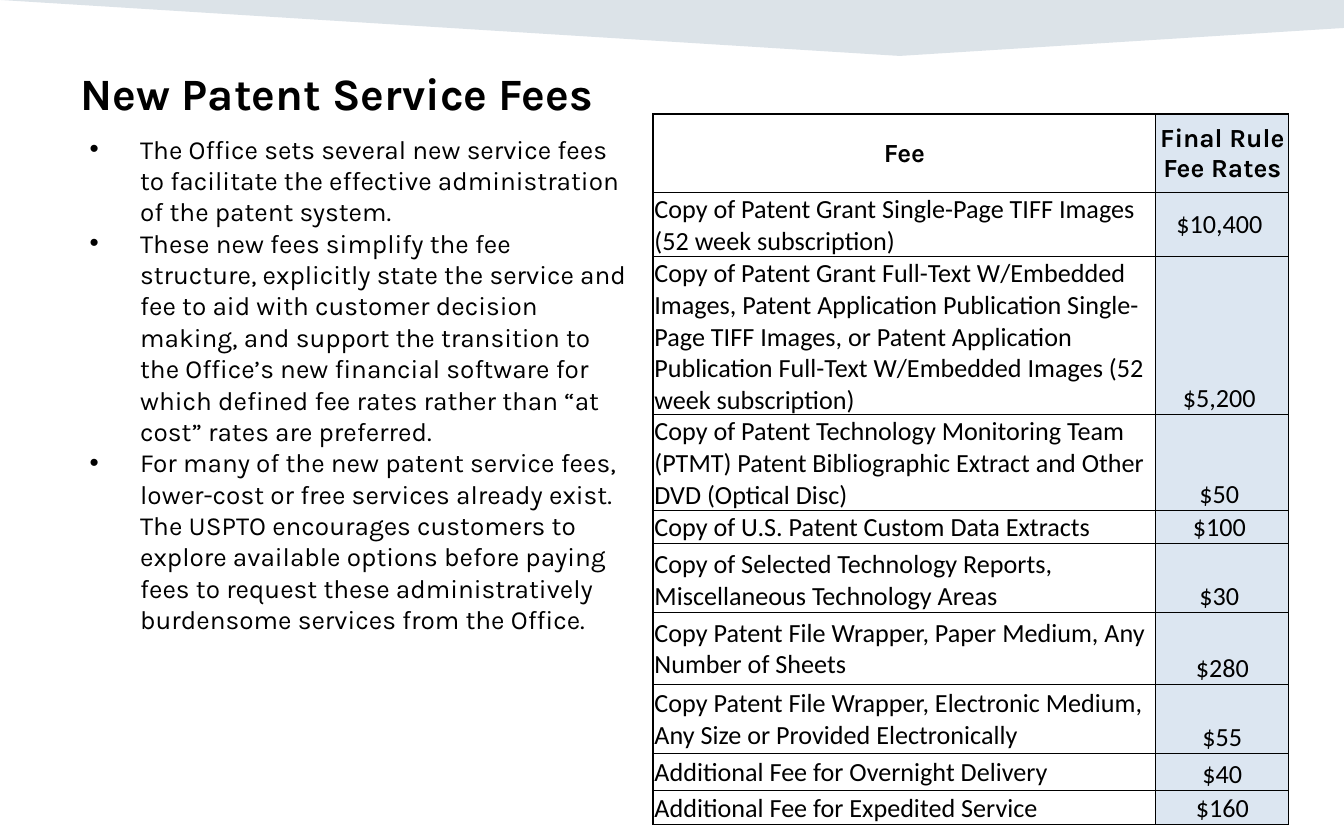
from lxml.etree import SubElement, Element
from pptx import Presentation
from pptx.dml.color import RGBColor
from pptx.enum.text import MSO_ANCHOR as ANCHOR, MSO_AUTO_SIZE as AUTO, PP_ALIGN as ALIGN
from pptx.oxml.ns import qn
from pptx.util import Pt

TITLE = "New Patent Service Fees"
POINTS = [
    "The Office sets several new service fees to facilitate the effective administration of the patent system.",
    "These new fees simplify the fee structure, explicitly state the service and fee to aid with customer "
    "decision making, and support the transition to the Office’s new financial software for which defined "
    "fee rates rather than “at cost” rates are preferred.",
    "For many of the new patent service fees, lower-cost or free services already exist. The USPTO encourages "
    "customers to explore available options before paying fees to request these administratively burdensome "
    "services from the Office.",
]
MID, LOW = ANCHOR.MIDDLE, ANCHOR.BOTTOM
FEES = [
    ("Fee", "Final Rule Fee Rates", 41.8, MID, MID),
    ("Copy of Patent Grant Single-Page TIFF Images (52 week subscription)", "$10,400 ", 26.6, MID, MID),
    ("Copy of Patent Grant Full-Text W/Embedded Images, Patent Application Publication Single-Page TIFF "
     "Images, or Patent Application Publication Full-Text W/Embedded Images (52 week subscription)",
     "$5,200 ", 70.6, MID, LOW),
    ("Copy of Patent Technology Monitoring Team (PTMT) Patent Bibliographic Extract and Other DVD "
     "(Optical Disc)", "$50 ", 43.2, LOW, LOW),
    ("Copy of U.S. Patent Custom Data Extracts", "$100 ", 18, LOW, MID),
    ("Copy of Selected Technology Reports, Miscellaneous Technology Areas", "$30 ", 36.7, LOW, LOW),
    ("Copy Patent File Wrapper, Paper Medium, Any Number of Sheets", "$280", 38.9, MID, LOW),
    ("Copy Patent File Wrapper, Electronic Medium, Any Size or Provided Electronically", "$55", 36.7, MID, LOW),
    ("Additional Fee for Overnight Delivery", "$40", 20.2, MID, LOW),
    ("Additional Fee for Expedited Service", "$160", 18, MID, LOW),
]
COLORS = {"text": "000000", "band": "164469", "label": "FFFFFF", "rate": "DCE6F1"}
BAND = [(0, 0), (720, 0), (720, 15.1), (481.7, 29.5)]
COL_WIDTHS = [269.3, 71.3]
TITLE_BOX = {"left": 36, "top": 29.5, "width": 648, "height": 36.7}
TITLE_FRAME = {"auto_size": AUTO.NONE, "word_wrap": True, "vertical_anchor": LOW, "margin_bottom": Pt(2)}
BODY_BOX = (41, 67.7, 303.1, 278.6)
TABLE_BOX = (349.9, 61.2, sum(COL_WIDTHS), 379.4)
HEADING = {"name": "Karla", "size": Pt(24), "bold": True}
BODY = {"name": "Karla", "size": Pt(14), "bold": False}
HEADER = {**BODY, "bold": True}
CELL = {**BODY, "name": "Calibri"}
CELL_MARGINS = {"margin_left": Pt(0.7), "margin_right": Pt(0.7), "margin_top": Pt(0.7), "margin_bottom": 0}


def set_all(obj, values):
    for name, value in values.items():
        setattr(obj, name, value)


def write(p, text, font, align=ALIGN.LEFT):
    p.alignment = align
    r = p.add_run()
    r.text = text
    set_all(r.font, font)
    r.font.color.rgb = RGBColor.from_string(COLORS["text"])


def add_band(s):
    builder = s.shapes.build_freeform(*BAND[0], scale=Pt(1))
    builder.add_line_segments(BAND[1:], close=True)
    sp = builder.convert_to_shape()
    sp.shadow.inherit = False
    sp.line.fill.background()
    sp.fill.solid()
    sp.fill.fore_color.rgb = RGBColor.from_string(COLORS["band"])
    color = next(sp.element.spPr.iter(qn("a:srgbClr")))
    SubElement(color, qn("a:alpha"), val="15000")
    s.shapes.element.insert(2, sp.element)


def add_title(s):
    sp = s.shapes.title
    set_all(sp, {name: Pt(v) for name, v in TITLE_BOX.items()})
    set_all(sp.text_frame, TITLE_FRAME)
    write(sp.text_frame.paragraphs[0], TITLE, HEADING)


def add_body(s):
    tf = s.shapes.add_textbox(*map(Pt, BODY_BOX)).text_frame
    tf.word_wrap = True
    for i, text in enumerate(POINTS):
        p = tf.add_paragraph() if i else tf.paragraphs[0]
        write(p, text, BODY)
        pPr = p._p.get_or_add_pPr()
        pPr.set("marL", str(Pt(27)))
        pPr.set("indent", str(-Pt(27)))
        SubElement(pPr, qn("a:buFont"), typeface="Arial")
        SubElement(pPr, qn("a:buChar"), char="•")


def add_borders(cell, widths):
    tcPr = cell._tc.get_or_add_tcPr()
    for i, (side, width) in enumerate(widths.items()):
        ln = Element(qn(f"a:ln{side}"), w=str(Pt(width)))
        fill = SubElement(ln, qn("a:solidFill"))
        SubElement(fill, qn("a:srgbClr"), val=COLORS["text"])
        tcPr.insert(i, ln)


def add_fees(s):
    frame = s.shapes.add_table(len(FEES), len(COL_WIDTHS), *map(Pt, TABLE_BOX))
    table = frame.table
    set_all(table, {"first_row": False, "horz_banding": False})
    for col, width in zip(table.columns, COL_WIDTHS):
        col.width = Pt(width)
    for i, (label, rate, height, *anchors) in enumerate(FEES):
        table.rows[i].height = Pt(height)
        for j, text in enumerate((label, rate)):
            cell = table.cell(i, j)
            set_all(cell, {**CELL_MARGINS, "vertical_anchor": anchors[j]})
            cell.fill.solid()
            cell.fill.fore_color.rgb = RGBColor.from_string(COLORS["rate" if j else "label"])
            align = ALIGN.LEFT if i and not j else ALIGN.CENTER
            write(cell.text_frame.paragraphs[0], text, CELL if i else HEADER, align)
            add_borders(cell, {"L": 0.5 if j else 1, "R": 0.5, "T": 0.5 if i else 1, "B": 0.5})
    frame.height = Pt(TABLE_BOX[3])


def main():
    """Build the patent service fees slide."""
    prs = Presentation()
    prs.slide_width, prs.slide_height = Pt(720), Pt(450)
    s = prs.slides.add_slide(prs.slide_layouts[5])
    add_band(s)
    add_title(s)
    add_body(s)
    add_fees(s)
    prs.save("out.pptx")


if __name__ == "__main__":
    main()
